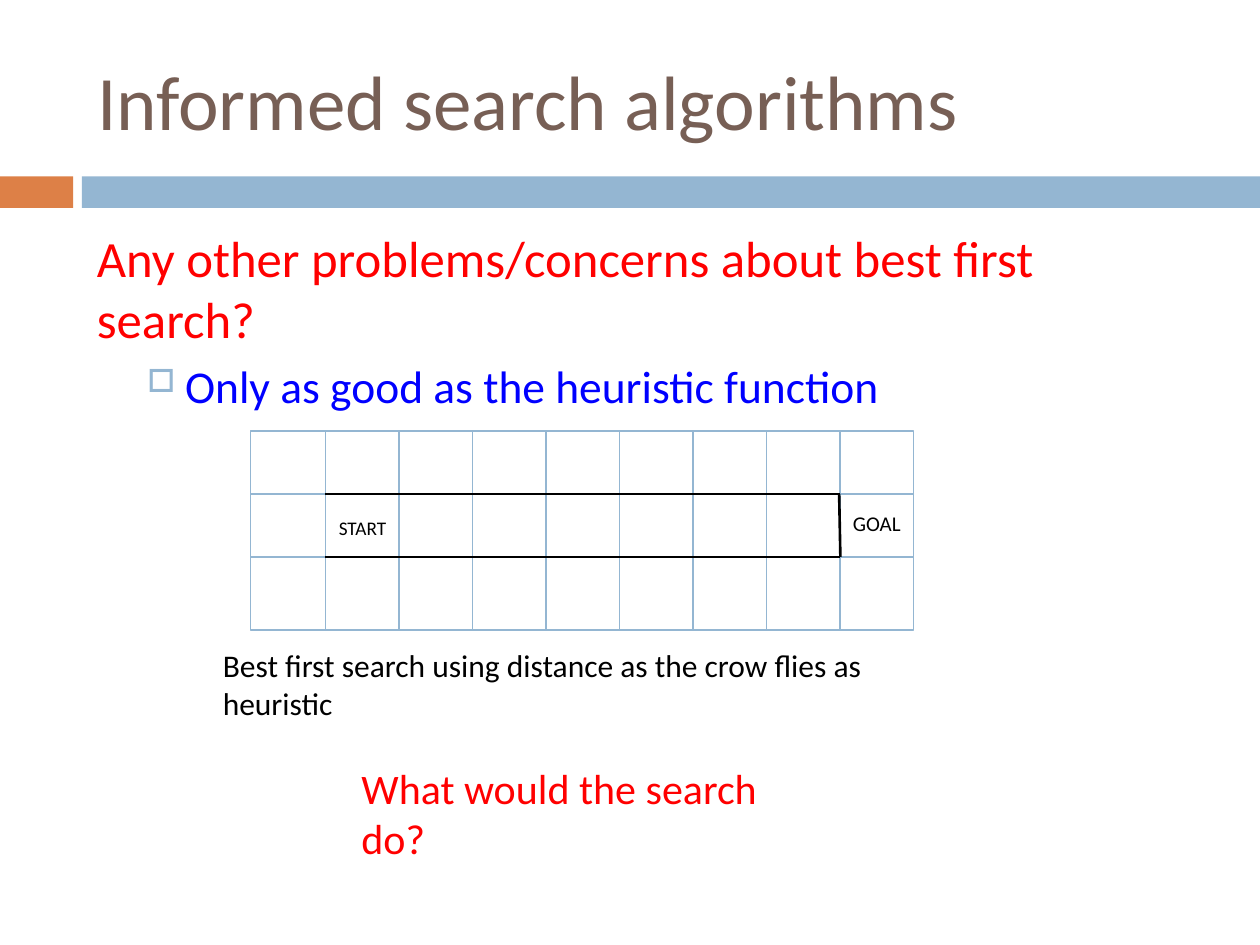
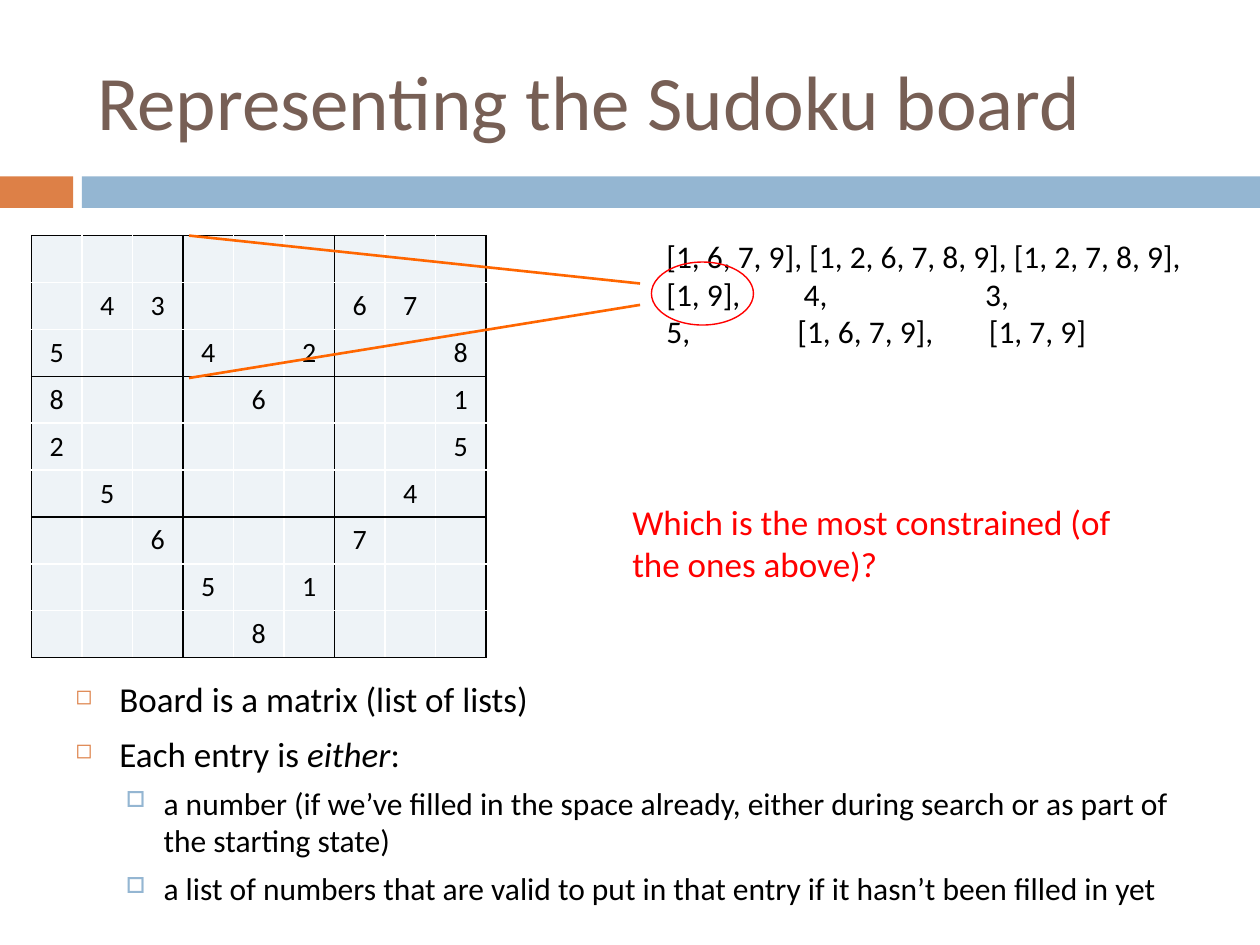
from dataclasses import dataclass

from lxml import etree
from pptx import Presentation, util as u
from pptx.dml.color import RGBColor
from pptx.enum import shapes as es, text as et
from pptx.oxml.ns import qn

FONT = "Calibri"
BLACK, WHITE, RED, BLUE = "000000", "FFFFFF", "FF0000", "0000FF"
BROWN, SKY, RUST, PALE, FLAME = "775F55", "94B6D2", "DD8047", "EEF3F7", "FF6600"


@dataclass(frozen=True)
class Box:
    left: float
    top: float
    width: float
    height: float

    def place(self) -> tuple:
        return tuple(map(u.Inches, (self.left, self.top, self.width, self.height)))


@dataclass(frozen=True)
class Mark:
    gap: float = 0
    sign: str = ""
    color: str = BLACK
    scale: int = 100
    left: float = 0
    hang: float = 0


@dataclass(frozen=True)
class Para:
    text: str
    size: float
    color: str = BLACK
    mark: Mark = Mark()
    tabs: tuple = ()


@dataclass(frozen=True)
class Note:
    box: Box
    paras: tuple
    wrap: bool = True


@dataclass(frozen=True)
class Line:
    x1: float
    y1: float
    x2: float
    y2: float
    color: str = SKY
    width: float = 1


LEAD = Mark(7)
ITEM = Mark(7, "◻", RUST, 60, 0.35, 0.35)
POINT = Mark(5.5, "□", SKY, 70, 0.7, 0.3)
TITLE = Box(0.67, 0.25, 8.92, 1.08)
BANDS = ((Box(0, 1.4, 0.58, 0.25), RUST), (Box(0.65, 1.4, 9.35, 0.25), SKY))

MAZE = Box(1.99, 3.42, 5.26, 1.58)
BOARD = Box(0.25, 1.87, 3.61, 3.3)
CLUES = (
    ".........",
    ".43...67.",
    "5..4.2..8",
    "8...6...1",
    "2.......5",
    ".5.....4.",
    "..6...7..",
    "...5.1...",
    "....8....",
)


def rgb(color: str) -> RGBColor:
    return RGBColor.from_string(color)


def child(node, tag: str, **attrs):
    return etree.SubElement(node, qn(f"a:{tag}"), attrs)


def tint(node, color: str) -> None:
    child(node, "srgbClr", val=color)


def style(font, size: float, color: str) -> None:
    font.name = FONT
    font.size = u.Pt(size)
    font.color.rgb = rgb(color)


def draw_shape(slide, kind, box: Box, fill: str = "", edge: str = "") -> None:
    shape = slide.shapes.add_shape(kind, *box.place())
    shape.shadow.inherit = False
    if fill:
        shape.fill.solid()
        shape.fill.fore_color.rgb = rgb(fill)
    else:
        shape.fill.background()
    if edge:
        shape.line.color.rgb = rgb(edge)
        shape.line.width = u.Pt(0.79)
    else:
        shape.line.fill.background()


def draw_line(slide, line: Line) -> None:
    ends = map(u.Inches, (line.x1, line.y1, line.x2, line.y2))
    link = slide.shapes.add_connector(es.MSO_CONNECTOR.STRAIGHT, *ends)
    link.line.color.rgb = rgb(line.color)
    link.line.width = u.Pt(line.width)
    child(link._element.spPr, "effectLst")


def fill_para(para, item: Para) -> None:
    for i, part in enumerate(item.text.split("*")):
        run = para.add_run()
        run.text = part
        style(run.font, item.size, item.color)
        run.font.italic = i % 2 == 1
    mark = item.mark
    para.space_before = u.Pt(mark.gap)
    props = para._p.get_or_add_pPr()
    if mark.sign:
        props.set("marL", str(u.Inches(mark.left)))
        props.set("indent", str(-u.Inches(mark.hang)))
        tint(child(props, "buClr"), mark.color)
        child(props, "buSzPct", val=str(mark.scale * 1000))
        child(props, "buChar", char=mark.sign)
    if item.tabs:
        stops = child(props, "tabLst")
        for stop in item.tabs:
            child(stops, "tab", pos=str(u.Inches(stop)), algn="l")


def draw_note(slide, note: Note) -> None:
    frame = slide.shapes.add_textbox(*note.box.place()).text_frame
    frame.word_wrap = note.wrap
    for i, item in enumerate(note.paras):
        fill_para(frame.add_paragraph() if i else frame.paragraphs[0], item)


def start_slide(deck, name: str):
    slide = deck.slides.add_slide(deck.slide_layouts[5])
    for box, color in BANDS:
        draw_shape(slide, es.MSO_SHAPE.RECTANGLE, box, fill=color)
    title = slide.shapes.title
    title.left, title.top, title.width, title.height = TITLE.place()
    frame = title.text_frame
    frame.text = name
    frame.auto_size = et.MSO_AUTO_SIZE.NONE
    frame.vertical_anchor = et.MSO_ANCHOR.MIDDLE
    para = frame.paragraphs[0]
    para.alignment = et.PP_ALIGN.LEFT
    style(para.runs[0].font, 44, BROWN)
    return slide


def draw_maze(slide) -> None:
    draw_shape(slide, es.MSO_SHAPE.RECTANGLE, MAZE, edge=SKY)
    right, base = MAZE.left + MAZE.width, MAZE.top + MAZE.height
    for i in range(1, 9):
        x = 2 + i * 7 / 12
        draw_line(slide, Line(x, MAZE.top, x, base))
    for y in (3.92, 4.42):
        draw_line(slide, Line(MAZE.left, y, right, y))
    for y in (3.92, 4.42):
        draw_line(slide, Line(2.58, y, 6.67, y, BLACK, 1.5))
    draw_line(slide, Line(6.67, 4.42, 6.66, 3.92, BLACK, 1.5))


def edge_cell(cell, row: int, col: int) -> None:
    props = cell._tc.get_or_add_tcPr()
    dark = {"lnL": col % 3 == 0, "lnR": col % 3 == 2,
            "lnT": row % 3 == 0, "lnB": row % 3 == 2}
    for tag, bold in dark.items():
        line = child(props, tag, w=str(u.Pt(1)))
        tint(child(line, "solidFill"), BLACK if bold else WHITE)


def draw_board(slide) -> None:
    count = len(CLUES)
    table = slide.shapes.add_table(count, count, *BOARD.place()).table
    table.first_row = table.horz_banding = False
    for row, clues in enumerate(CLUES):
        for col, clue in enumerate(clues):
            cell = table.cell(row, col)
            edge_cell(cell, row, col)
            cell.fill.solid()
            cell.fill.fore_color.rgb = rgb(PALE)
            para = cell.text_frame.paragraphs[0]
            para.alignment = et.PP_ALIGN.CENTER
            if clue == ".":
                child(para._p, "endParaRPr", sz="1600")
            else:
                para.text = clue
                style(para.runs[0].font, 16, BLACK)


def build_search(deck) -> None:
    slide = start_slide(deck, "Informed search algorithms")
    draw_maze(slide)
    notes = (
        Note(Box(0.67, 1.75, 8.92, 1.25), (
            Para("Any other problems/concerns about best first search?", 29, RED, LEAD),
            Para("Only as good as the heuristic function", 26, BLUE, POINT))),
        Note(Box(2.59, 4.05, 0.58, 0.29), (Para("START", 11),), False),
        Note(Box(6.67, 4, 0.62, 0.3), (Para("GOAL", 12),), False),
        Note(Box(1.67, 5.08, 6.06, 0.4), (
            Para("Best first search using distance as the crow flies as heuristic", 18),)),
        Note(Box(2.77, 6, 3.89, 0.5), (Para("What would the search do?", 24, RED),)),
    )
    for note in notes:
        draw_note(slide, note)


def build_board(deck) -> None:
    slide = start_slide(deck, "Representing the Sudoku board")
    draw_board(slide)
    draw_line(slide, Line(1.5, 1.87, 5.08, 2.25, FLAME, 1.5))
    draw_line(slide, Line(1.5, 3, 5.08, 2.42, FLAME, 1.5))
    notes = (
        Note(Box(5.19, 1.83, 4.65, 1.01), (
            Para("[1, 6, 7, 9], [1, 2, 6, 7, 8, 9], [1, 2, 7, 8, 9],", 18),
            Para("[1, 9],\t4,\t3,", 18, tabs=(1.09, 2.53)),
            Para("5,\t[1, 6, 7, 9],\t[1, 7, 9]", 18, tabs=(1.04, 2.56)))),
        Note(Box(0.5, 5.33, 9, 1.75), (
            Para("Board is a matrix (list of lists)", 20, mark=ITEM),
            Para("Each entry is *either*:", 20, mark=ITEM),
            Para("a number (if we’ve filled in the space already, either during "
                 "search or as part of the starting state)", 18, mark=POINT),
            Para("a list of numbers that are valid to put in that entry if it "
                 "hasn’t been filled in yet", 18, mark=POINT))),
        Note(Box(4.92, 3.92, 4.14, 0.77), (
            Para("Which is the most constrained (of the ones above)?", 20, RED),)),
    )
    for note in notes:
        draw_note(slide, note)
    draw_shape(slide, es.MSO_SHAPE.OVAL, Box(5.17, 2.08, 0.81, 0.5), edge=RED)


def main() -> None:
    deck = Presentation()
    deck.slide_width, deck.slide_height = u.Inches(10), u.Inches(7.5)
    build_search(deck)
    build_board(deck)
    deck.save("out.pptx")


if __name__ == "__main__":
    main()
